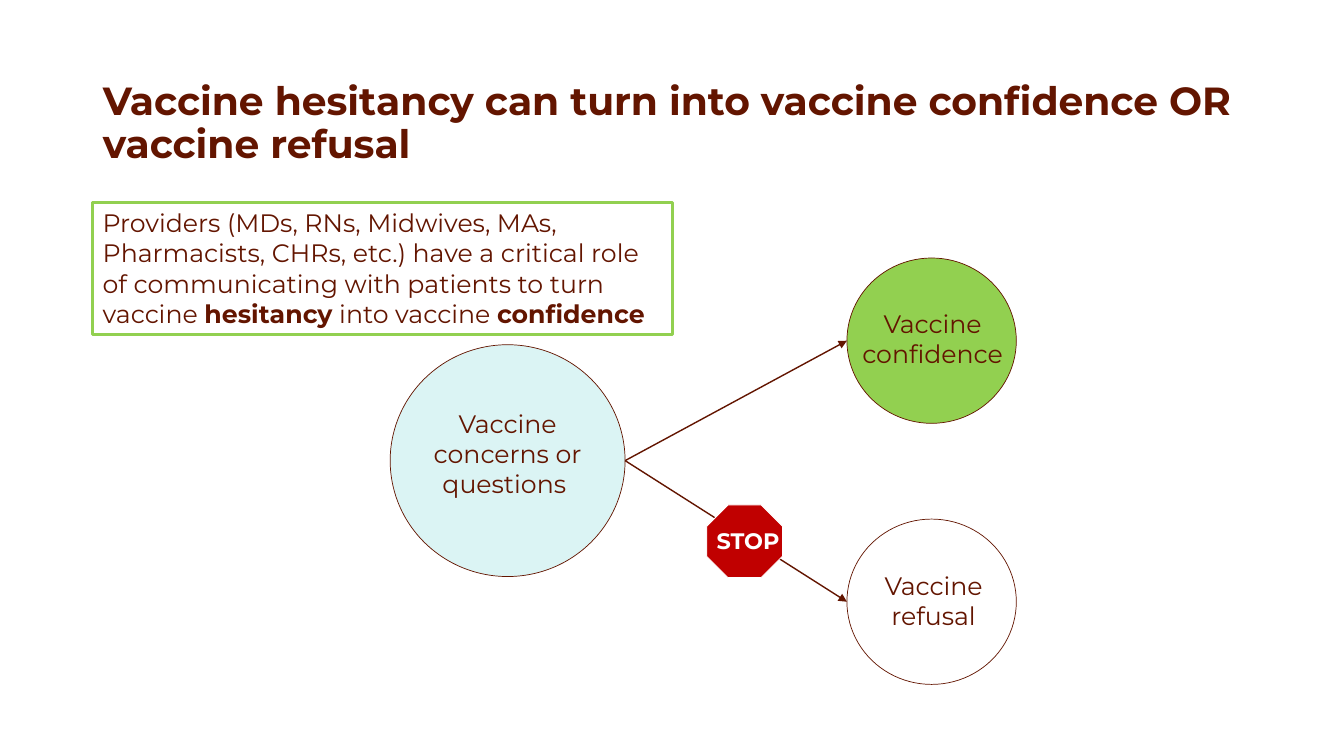
from lxml.etree import SubElement
from pptx import Presentation
from pptx.dml.color import RGBColor
from pptx.enum.shapes import MSO_CONNECTOR as Connector, MSO_SHAPE as Shape
from pptx.enum.text import MSO_ANCHOR as Anchor, PP_ALIGN as Align
from pptx.oxml.ns import qn
from pptx.util import Inches, Pt

FONT = "Montserrat"
BROWN, GREEN, AQUA, RED, WHITE = "631500", "92D050", "DBF4F4", "C00000", "FFFFFF"


def color(value):
    return RGBColor.from_string(value)


def inches(*lengths):
    return [Inches(length) for length in lengths]


class Board:
    def __init__(self, slide):
        self.slide = slide

    def add_words(self, frame, runs, size=18, ink=BROWN, align=Align.LEFT, anchor=Anchor.TOP):
        frame.word_wrap = True
        frame.vertical_anchor = anchor
        paragraph = frame.paragraphs[0]
        paragraph.alignment = align
        for words, bold in runs:
            run = paragraph.add_run()
            run.text = words
            run.font.name = FONT
            run.font.size = Pt(size)
            run.font.bold = bold
            run.font.color.rgb = color(ink)
        return paragraph

    def title(self, words, at):
        heading = self.slide.shapes.title
        heading.left, heading.top, heading.width, heading.height = inches(*at)
        paragraph = self.add_words(heading.text_frame, [(words, True)], 28, anchor=Anchor.MIDDLE)
        paragraph.line_spacing = 0.9

    def shape(self, kind, at, fill=None, line=BROWN, weight=0.5):
        figure = self.slide.shapes.add_shape(kind, *inches(*at))
        figure.shadow.inherit = False
        if fill:
            figure.fill.solid()
            figure.fill.fore_color.rgb = color(fill)
        else:
            figure.fill.background()
        figure.line.color.rgb = color(line)
        figure.line.width = Pt(weight)
        return figure

    def label(self, words, at, size=18, ink=BROWN, align=Align.CENTER, bold=False):
        box = self.slide.shapes.add_textbox(*inches(*at))
        self.add_words(box.text_frame, [(words, bold)], size, ink, align)

    def arrow(self, start, end):
        link = self.slide.shapes.add_connector(Connector.STRAIGHT, *inches(*start, *end))
        link.line.color.rgb = color(BROWN)
        link.line.width = Pt(1)
        properties = link._element.spPr
        SubElement(properties.find(qn("a:ln")), qn("a:tailEnd"), type="triangle")
        SubElement(properties, qn("a:effectLst"))


def main():
    deck = Presentation()
    deck.slide_width, deck.slide_height = inches(13.33, 7.5)
    board = Board(deck.slides.add_slide(deck.slide_layouts[5]))

    board.title("Vaccine hesitancy can turn into vaccine confidence OR vaccine refusal",
                (0.92, 0.51, 11.5, 1.45))

    board.shape(Shape.OVAL, (3.87, 3.42, 2.33, 2.3), AQUA)
    board.label("Vaccine concerns or questions ", (3.87, 4, 2.33, 1.01))

    outcomes = [
        ("Vaccine confidence", 2.56, GREEN, (8.45, 3.01, 1.6, 0.71)),
        ("Vaccine refusal", 5.15, None, (8.53, 5.61, 1.46, 0.71)),
    ]
    for words, top, fill, label_at in outcomes:
        board.shape(Shape.OVAL, (8.4, top, 1.68, 1.64), fill)
        board.arrow((6.2, 4.57), (8.4, top + 0.82))
        board.label(words, label_at)

    board.shape(Shape.OCTAGON, (7.01, 5.01, 0.75, 0.72), RED, WHITE)
    board.label("STOP", (7.01, 5.18, 0.96, 0.37), 16, WHITE, Align.LEFT, True)

    providers = board.shape(Shape.RECTANGLE, (0.92, 2.01, 5.75, 1.31), WHITE, GREEN, 2)
    board.add_words(providers.text_frame, [
        ("Providers (MDs, RNs, Midwives, MAs, Pharmacists, CHRs, etc.) have a critical role "
         "of communicating with patients to turn vaccine ", False),
        ("hesitancy", True),
        (" into vaccine ", False),
        ("confidence", True),
    ])

    deck.save("out.pptx")


if __name__ == "__main__":
    main()
